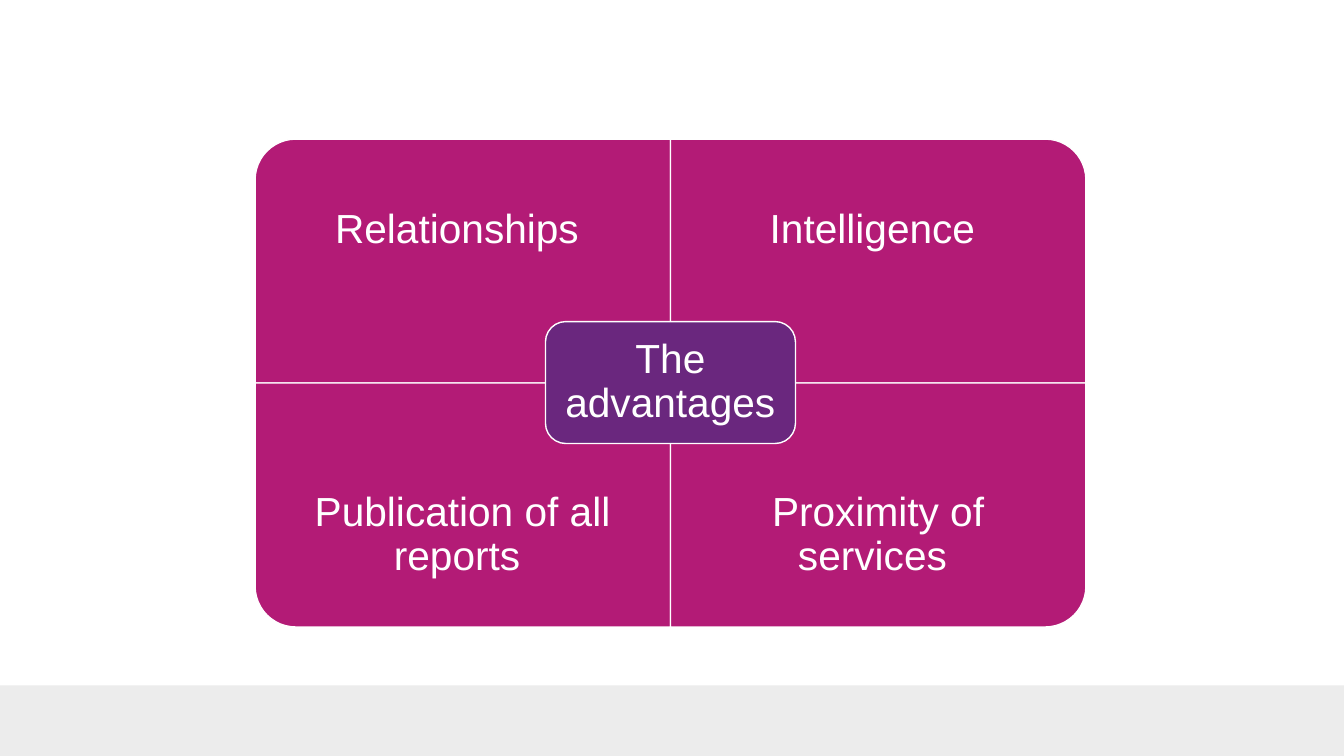
from pptx import Presentation
from pptx.dml.color import RGBColor
from pptx.enum.shapes import MSO_SHAPE
from pptx.enum.text import MSO_ANCHOR, PP_ALIGN
from pptx.util import Inches, Pt

COLOURS = {"white": "FFFFFF", "band": "ECECEC", "quadrant": "B31B76", "centre": "6A277E"}


class SlideBuilder:
    font = "Arial"
    size = Pt(29)

    def __init__(self, page):
        self.page = page

    def shape(self, kind, left, top, width, height, fill, outlined=True, rotation=0):
        shape = self.page.shapes.add_shape(
            kind, Inches(left), Inches(top), Inches(width), Inches(height))
        shape.shadow.inherit = False
        shape.rotation = rotation
        shape.fill.solid()
        shape.fill.fore_color.rgb = RGBColor.from_string(COLOURS[fill])
        if outlined:
            shape.line.color.rgb = RGBColor.from_string(COLOURS["white"])
            shape.line.width = Pt(1)
        else:
            shape.line.fill.background()
        return shape

    def label(self, box, text, inset):
        frame = box.text_frame
        frame.word_wrap = True
        frame.vertical_anchor = MSO_ANCHOR.MIDDLE
        frame.margin_left = frame.margin_right = Inches(inset)
        frame.margin_top = frame.margin_bottom = Inches(inset)
        frame.text = text
        para = frame.paragraphs[0]
        para.alignment = PP_ALIGN.CENTER
        para.line_spacing = 0.9
        span = para.runs[0]
        span.font.name = self.font
        span.font.size = self.size
        span.font.color.rgb = RGBColor.from_string(COLOURS["white"])

    def text_box(self, left, top, width, height, text, inset):
        box = self.page.shapes.add_textbox(
            Inches(left), Inches(top), Inches(width), Inches(height))
        self.label(box, text, inset)

    def quadrant(self, left, top, width, height, rotation):
        if rotation in (90, 270):
            left += (width - height) / 2
            top += (height - width) / 2
            width, height = height, width
        self.shape(MSO_SHAPE.ROUND_1_RECTANGLE, left, top, width, height,
                   "quadrant", rotation=rotation)


def main():
    deck = Presentation()
    deck.slide_width = Inches(13.33)
    deck.slide_height = Inches(7.5)
    builder = SlideBuilder(deck.slides.add_slide(deck.slide_layouts[6]))

    builder.shape(MSO_SHAPE.RECTANGLE, 0, 6.8, 13.33, 0.7, "band", outlined=False)

    matrix_left, matrix_top = 2.53, 1.38
    width, height, text_height = 4.12, 2.42, 1.82
    quadrants = [
        ("Relationships ", 0, 0, 270),
        ("Intelligence ", 1, 0, 0),
        ("Publication of all reports ", 0, 1, 180),
        ("Proximity of services ", 1, 1, 90),
    ]
    for text, column, row, rotation in quadrants:
        left = matrix_left + column * width
        top = matrix_top + row * height
        builder.quadrant(left, top, width, height, rotation)
        text_top = top + row * (height - text_height)
        builder.text_box(left, text_top, width, text_height, text, 0.23)

    centre = builder.shape(MSO_SHAPE.ROUNDED_RECTANGLE, 5.41, 3.19, 2.48, 1.21, "centre")
    builder.label(centre, "The advantages ", 0.12)

    deck.save("out.pptx")


if __name__ == "__main__":
    main()
